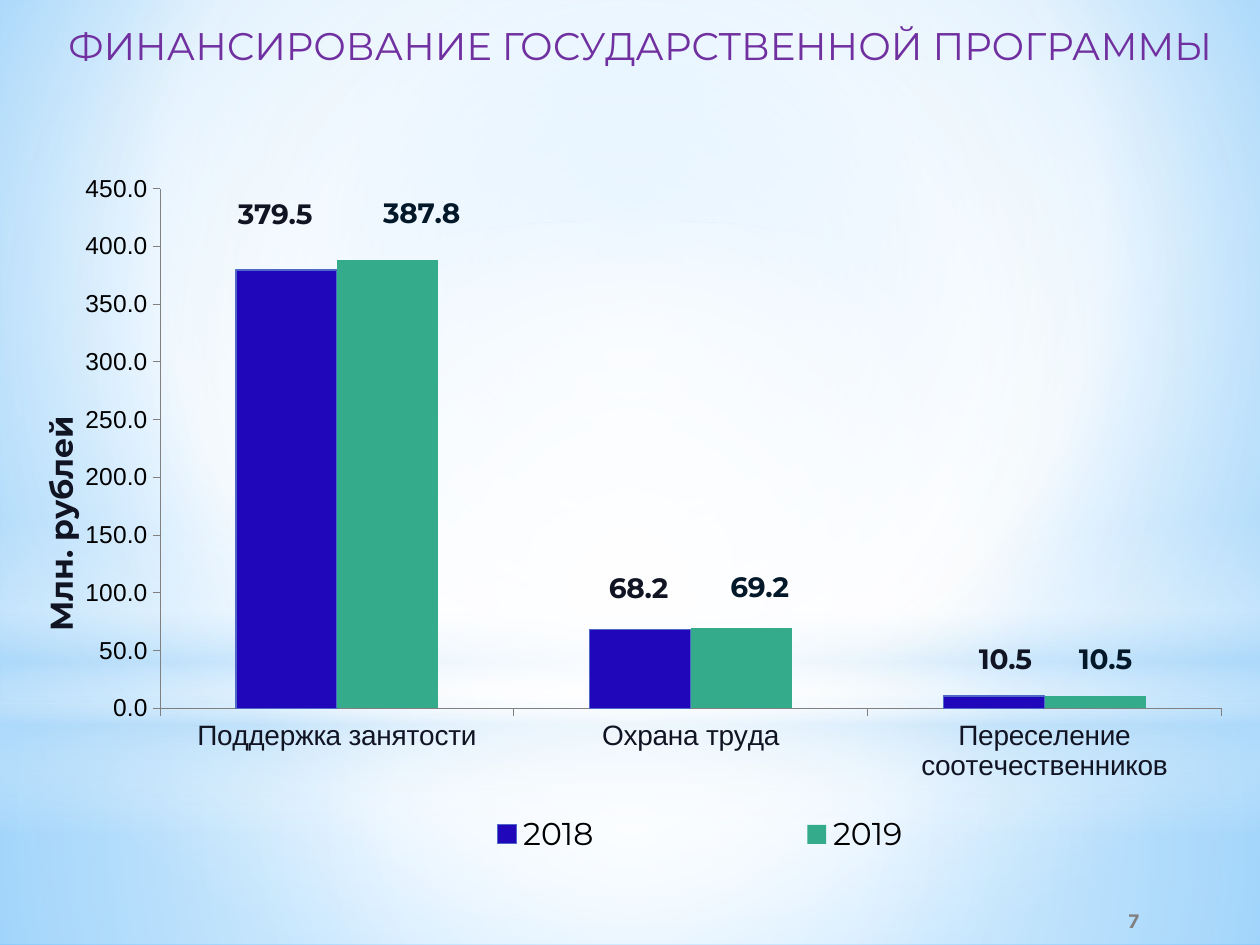
from lxml import etree
from pptx import Presentation
from pptx.chart.data import CategoryChartData
from pptx.dml.color import RGBColor
from pptx.enum.chart import XL_CHART_TYPE, XL_LABEL_POSITION, XL_LEGEND_POSITION, XL_TICK_MARK
from pptx.enum.shapes import MSO_SHAPE
from pptx.enum.text import MSO_ANCHOR, PP_ALIGN
from pptx.oxml import parse_xml
from pptx.oxml.ns import nsdecls, qn
from pptx.util import Pt

COLORS = {
    "white": "FFFFFF", "sky": "9ED5FF", "deep_sky": "5BB9FF", "haze": "B4DCFA",
    "title": "7030A0", "ink": "111422", "dark": "031828", "black": "000000",
    "gray": "808080", "bar_2018": "2007B9", "edge_2018": "4E67C8", "bar_2019": "34AC8B",
}
CENTER = (50, 50, 50, 50)
PANELS = [
    (MSO_SHAPE.RECTANGLE, (0, 402, 720, 138),
     [(0, "white", 91), (37, "white", 76), (100, "haze", 79)], CENTER),
    (MSO_SHAPE.RECTANGLE, (0, 0, 720, 402),
     [(0, "white", 89), (48, "white", 62), (100, "haze", 79)], CENTER),
    (MSO_SHAPE.RECTANGLE, (0, 297, 720, 180),
     [(0, "white", 0), (29, "white", 30), (45, "haze", 40), (55, "white", 26),
      (65, "haze", 60), (100, "white", 0)], None),
    (MSO_SHAPE.OVAL, (0, 126, 720, 402), [(0, "white", 100), (56, "white", 0)], CENTER),
]
CHART_BOX = (8.5, 82.8, 703, 414)
CATEGORIES = ["Поддержка занятости", "Охрана труда", "Переселение соотечественников"]
SERIES = [
    {"name": "2018", "values": (379.5, 68.2, 10.5), "fill": "bar_2018", "edge": "edge_2018",
     "text": "ink", "shifts": [(-6.5, -19.5), (-1, -11), (6.5, -8.5)]},
    {"name": "2019", "values": (387.8, 69.2, 10.5), "fill": "bar_2019", "edge": None,
     "text": "dark", "shifts": [(19.5, -14.5), (10.5, -11), (6, -8.5)]},
]
NUMBER_FORMAT = "#,##0.0"


def color(name):
    """Return the named colour."""
    return RGBColor.from_string(COLORS[name])


def style(font, size, name, tint, bold=False):
    """Set the size, typeface, colour and weight of a font."""
    font.size, font.name, font.bold = Pt(size), name, bold
    font.color.rgb = color(tint)


def gradient(stops, focus):
    """Build a gradient fill, circular around a focus or else vertical."""
    marks = "".join(
        f'<a:gs pos="{at * 1000}"><a:srgbClr val="{COLORS[tint]}">'
        f'<a:alpha val="{alpha * 1000}"/></a:srgbClr></a:gs>' for at, tint, alpha in stops)
    if focus:
        sides = " ".join(f'{side}="{value * 1000}"' for side, value in zip("ltrb", focus))
        course = f'<a:path path="circle"><a:fillToRect {sides}/></a:path>'
    else:
        course = '<a:lin ang="5400000" scaled="0"/>'
    return parse_xml(f'<a:gradFill {nsdecls("a")} rotWithShape="1">'
                     f'<a:gsLst>{marks}</a:gsLst>{course}</a:gradFill>')


def set_gradient(fill, parent, stops, focus):
    """Give a fill and its parent element a gradient."""
    fill.solid()
    parent.replace(parent.find(qn("a:solidFill")), gradient(stops, focus))


def add_background(page):
    """Paint the background and its translucent panels."""
    fill = page.background.fill
    properties = page.element.find(".//" + qn("p:bgPr"))
    set_gradient(fill, properties,
                 [(0, "sky", 100), (60, "white", 100), (100, "deep_sky", 100)], (20, 10, 20, 60))
    for kind, box, stops, focus in PANELS:
        panel = page.shapes.add_shape(kind, *map(Pt, box))
        panel.shadow.inherit = False
        panel.line.fill.background()
        set_gradient(panel.fill, panel.element.spPr, stops, focus)


def add_title(page, box):
    """Place the title in front of the panels."""
    title = page.shapes.title
    title.element.getparent().append(title.element)
    title.left, title.top, title.width, title.height = map(Pt, box)
    frame = title.text_frame
    frame.text = "ФИНАНСИРОВАНИЕ ГОСУДАРСТВЕННОЙ ПРОГРАММЫ"
    frame.vertical_anchor = MSO_ANCHOR.TOP
    para = frame.paragraphs[0]
    para.alignment = PP_ALIGN.RIGHT
    style(para.font, 22, "Montserrat", "title")


def set_layout(element, index, modes, **lengths):
    """Give a chart element a manual layout, from lengths in points."""
    for old in element.findall(qn("c:layout")):
        element.remove(old)
    layout = etree.Element(qn("c:layout"))
    manual = etree.SubElement(layout, qn("c:manualLayout"))
    width, height = CHART_BOX[2:]
    shares = {tag: length / (width if tag in "xw" else height) for tag, length in lengths.items()}
    for tag, value in {**modes, **shares}.items():
        etree.SubElement(manual, qn("c:" + tag)).set("val", str(value))
    element.insert(index, layout)


def format_series(series, row):
    """Colour one series and place its value labels without leader lines."""
    series.format.fill.solid()
    series.format.fill.fore_color.rgb = color(row["fill"])
    if row["edge"]:
        series.format.line.color.rgb = color(row["edge"])
        series.format.line.width = Pt(0.75)
    labels = series.data_labels
    labels.show_value = True
    labels.number_format, labels.number_format_is_linked = NUMBER_FORMAT, False
    style(labels.font, 16, "Montserrat", row["text"], True)
    for leader in labels._element.findall(qn("c:showLeaderLines")):
        leader.set("val", "0")
    for index in range(len(CATEGORIES)):
        label = series.points[index].data_label
        style(label.font, 16, "Montserrat", row["text"], True)
        label.position = XL_LABEL_POSITION.OUTSIDE_END
    for element, (across, down) in zip(labels._element.findall(qn("c:dLbl")), row["shifts"]):
        set_layout(element, 1, {}, x=across, y=down)


def format_axes(chart, edge):
    """Style both axes and the value axis title."""
    category, value = chart.category_axis, chart.value_axis
    for axis, size, tint in ((category, 16, "ink"), (value, 14, "black")):
        axis.has_major_gridlines = False
        axis.major_tick_mark = XL_TICK_MARK.OUTSIDE
        axis.format.line.color.rgb = color("gray")
        axis.format.line.width = Pt(0.5)
        style(axis.tick_labels.font, size, "Arial", tint)
    value.minimum_scale, value.maximum_scale, value.major_unit = 0, 450, 50
    value.tick_labels.number_format = NUMBER_FORMAT
    value.tick_labels.number_format_is_linked = False
    title = value.axis_title
    title.text_frame.text = "Млн. рублей"
    style(title.text_frame.paragraphs[0].font, 18, "Montserrat", "ink", True)
    set_layout(title._element, 1, edge, x=10.5, y=151.5)


def add_funding_chart(page, box):
    """Add the clustered columns of funding by direction and year."""
    data = CategoryChartData(number_format=NUMBER_FORMAT)
    data.categories = CATEGORIES
    for row in SERIES:
        data.add_series(row["name"], row["values"])
    chart = page.shapes.add_chart(XL_CHART_TYPE.COLUMN_CLUSTERED, *map(Pt, box), data).chart
    style(chart.font, 18, "Karla", "black")
    chart.has_title = False
    plot = chart.plots[0]
    plot.gap_width, plot.vary_by_categories = 150, False
    for series, row in zip(plot.series, SERIES):
        format_series(series, row)
    edge = {"xMode": "edge", "yMode": "edge"}
    format_axes(chart, edge)
    chart.has_legend = True
    legend = chart.legend
    legend.position = XL_LEGEND_POSITION.BOTTOM
    legend.include_in_layout = False
    style(legend.font, 18, "Montserrat", "black")
    set_layout(legend._element, 1, edge, x=159.5, y=375.5, w=464, h=37)
    plot_area = chart.element.find(".//" + qn("c:plotArea"))
    set_layout(plot_area, 0, {"layoutTarget": "inner", **edge}, x=83, y=25, w=606.5, h=297)


def add_page_number(page, box):
    """Add the page number."""
    frame = page.shapes.add_textbox(*map(Pt, box)).text_frame
    frame.word_wrap = True
    frame.vertical_anchor = MSO_ANCHOR.MIDDLE
    frame.text = "7"
    para = frame.paragraphs[0]
    para.alignment = PP_ALIGN.CENTER
    style(para.font, 12, "Karla", "gray", True)


def main():
    """Build and save the deck."""
    deck = Presentation()
    deck.slide_width, deck.slide_height = Pt(720), Pt(540)
    page = deck.slides.add_slide(deck.slide_layouts[5])
    add_background(page)
    add_title(page, (20, 9, 680, 60.5))
    add_funding_chart(page, CHART_BOX)
    add_page_number(page, (576, 511, 144, 29))
    deck.save("out.pptx")


if __name__ == "__main__":
    main()
